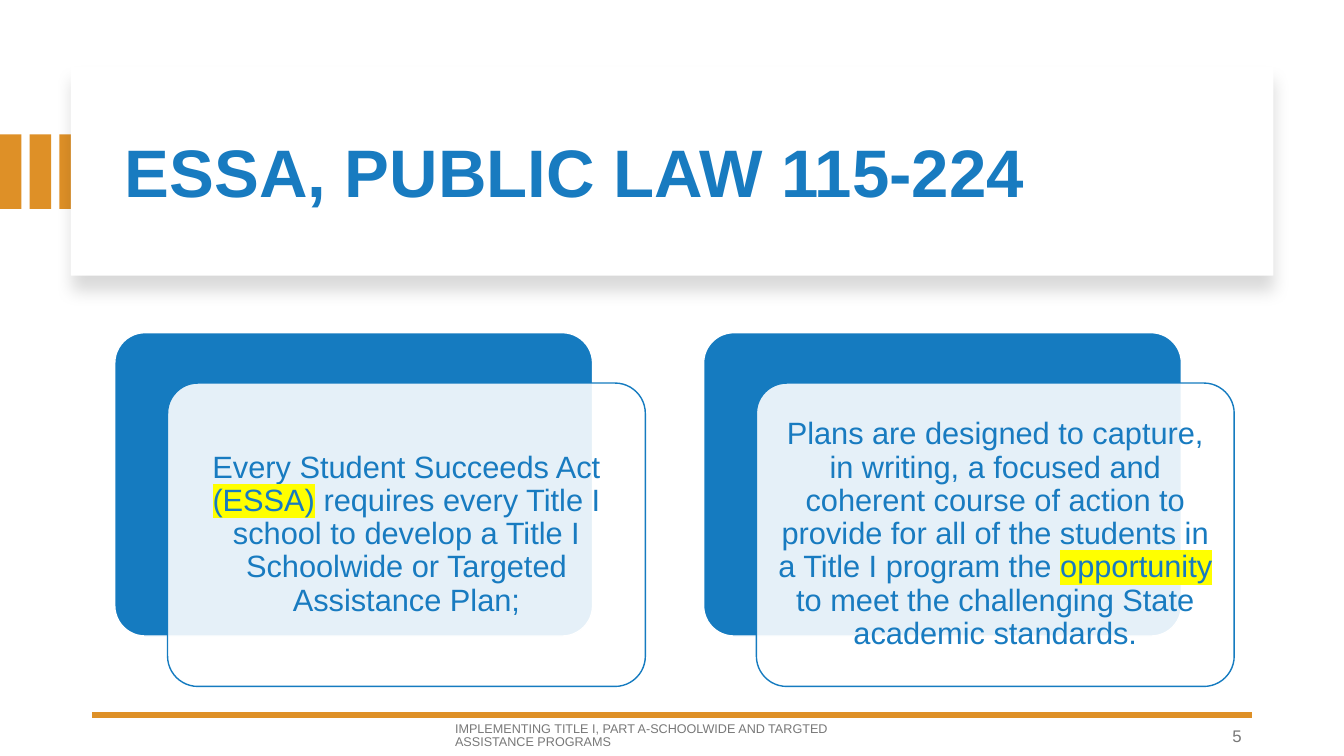
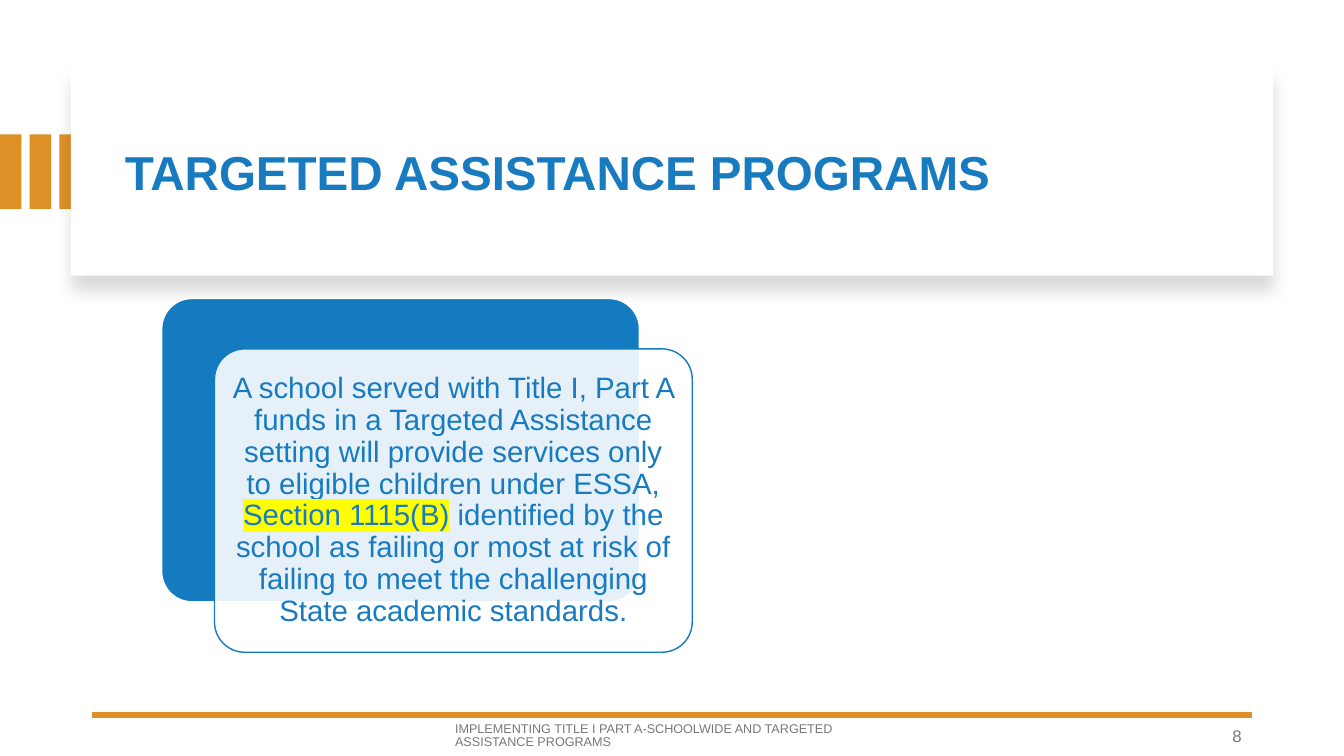
"""Build two Title I slides with overlapping cards under a raised title panel."""
from lxml import etree
from pptx import Presentation
from pptx.dml.color import RGBColor
from pptx.enum.shapes import MSO_CONNECTOR as Connector, MSO_SHAPE as Shape
from pptx.enum.text import MSO_ANCHOR as Anchor, MSO_AUTO_SIZE as AutoSize, PP_ALIGN as Align
from pptx.oxml import parse_xml
from pptx.oxml.ns import nsdecls, qn
from pptx.util import Pt

ORANGE = RGBColor(0xDE, 0x90, 0x27)
CARD_BLUE = RGBColor(0x15, 0x7B, 0xC0)
TEXT_BLUE = RGBColor(0x18, 0x7B, 0xC0)
GRAY = RGBColor(0x78, 0x78, 0x78)
WHITE = RGBColor(0xFF, 0xFF, 0xFF)
YELLOW = RGBColor(0xFF, 0xFF, 0x00)

SLIDES = [
    {
        "title": "ESSA, PUBLIC LAW 115-224",
        "title_size": 48,
        "footer": "IMPLEMENTING TITLE I, PART A-SCHOOLWIDE AND TARGTED ASSISTANCE PROGRAMS",
        "number": "5",
        "origin": (82, 237.6),
        "card_size": 22,
        "cards": [
            ("Every Student Succeeds Act ", "(ESSA)",
             " requires every Title I school to develop a Title I Schoolwide or Targeted Assistance Plan;"),
            ("Plans are designed to capture, in writing, a focused and coherent course of action to "
             "provide for all of the students in a Title I program the ", "opportunity",
             " to meet the challenging State academic standards."),
        ],
    },
    {
        "title": "TARGETED ASSISTANCE PROGRAMS",
        "title_size": 34,
        "footer": "IMPLEMENTING TITLE I PART A-SCHOOLWIDE AND TARGETED ASSISTANCE PROGRAMS",
        "number": "8",
        "origin": (115.5, 213.2),
        "card_size": 21,
        "cards": [
            ("A school served with Title I, Part A funds in a Targeted Assistance setting will "
             "provide services only to eligible children under ESSA, ", "Section 1115(B)",
             " identified by the school as failing or most at risk of failing to meet the "
             "challenging State academic standards."),
        ],
    },
]

BAR_COUNT, BAR_STEP = 3, 21.2
CARD_SIZE = (341.3, 216.7)
CARD_STEP = 420.6
FRONT_SHIFT = (37.7, 36)

TITLE_FONT = {"name": "Arial", "bold": True}
BODY_FONT = {"name": "Arial", "bold": False}

PANEL_SHADOW = (
    f'<a:effectLst {nsdecls("a")}>'
    f'<a:outerShdw blurRad="{Pt(11)}" dist="{Pt(10)}" dir="5400000" algn="t" rotWithShape="0">'
    '<a:srgbClr val="000000"><a:alpha val="15000"/></a:srgbClr>'
    '</a:outerShdw></a:effectLst>'
)


def add_block(slide, preset, box, fill, line=None):
    block = slide.shapes.add_shape(preset, *map(Pt, box))
    block.shadow.inherit = False
    block.fill.solid()
    block.fill.fore_color.rgb = fill
    if line is None:
        block.line.fill.background()
    else:
        block.line.color.rgb = line
        block.line.width = Pt(1)
    return block


def write(shape, parts, size, color, align, font=BODY_FONT, insets=(7.2, 3.6), spacing=0.9):
    frame = shape.text_frame
    side, end = map(Pt, insets)
    layout = {"word_wrap": True, "auto_size": AutoSize.NONE, "vertical_anchor": Anchor.MIDDLE,
              "margin_left": side, "margin_right": side, "margin_top": end, "margin_bottom": end}
    for key, value in layout.items():
        setattr(frame, key, value)
    paragraph = frame.paragraphs[0]
    paragraph.alignment, paragraph.line_spacing = align, spacing
    for index, text in enumerate(parts):
        run = paragraph.add_run()
        run.text = text
        for key, value in {**font, "size": Pt(size)}.items():
            setattr(run.font, key, value)
        run.font.color.rgb = color
        if index == 1:
            highlight(run)


def highlight(run):
    fill = run.font._element.find(qn("a:solidFill"))
    mark = etree.Element(qn("a:highlight"))
    etree.SubElement(mark, qn("a:srgbClr"), val=str(YELLOW))
    fill.addnext(mark)


def add_header(slide, text, size):
    for index in range(BAR_COUNT):
        add_block(slide, Shape.RECTANGLE, (index * BAR_STEP, 96, 15.3, 53.3), ORANGE)
    panel = add_block(slide, Shape.RECTANGLE, (50.6, 48, 859, 149), WHITE)
    properties = panel.element.spPr
    properties.replace(properties.find(qn("a:effectLst")), parse_xml(PANEL_SHADOW))

    title = slide.shapes.title
    title.left, title.top, title.width, title.height = map(Pt, (82, 64, 801.4, 122.4))
    write(title, [text], size, TEXT_BLUE, Align.LEFT, TITLE_FONT)
    title.element.getparent().append(title.element)


def add_footer(slide, text, number):
    rule = slide.shapes.add_connector(Connector.STRAIGHT, *map(Pt, (894, 510.5, 66, 510.5)))
    rule.line.color.rgb = ORANGE
    rule.line.width = Pt(4.5)
    etree.SubElement(rule.element.spPr, qn("a:effectLst"))
    footer = slide.shapes.add_textbox(*map(Pt, (318, 511.2, 324, 28.8)))
    write(footer, [text], 9, GRAY, Align.LEFT)
    page = slide.shapes.add_textbox(*map(Pt, (678, 511.2, 216, 28.8)))
    write(page, [number], 12, GRAY, Align.RIGHT, spacing=1.0)


def add_card(slide, left, top, parts, size):
    back = add_block(slide, Shape.ROUNDED_RECTANGLE, (left, top, *CARD_SIZE), CARD_BLUE, WHITE)
    shift_x, shift_y = FRONT_SHIFT
    front = add_block(slide, Shape.ROUNDED_RECTANGLE,
                      (left + shift_x, top + shift_y, *CARD_SIZE), WHITE, CARD_BLUE)
    for card in (back, front):
        card.adjustments[0] = 0.1
    white = front.element.spPr.find(qn("a:solidFill")).find(qn("a:srgbClr"))
    etree.SubElement(white, qn("a:alpha"), val="89000")
    write(front, parts, size, TEXT_BLUE, Align.CENTER, insets=(6.5, 6.5))


def main():
    deck = Presentation()
    deck.slide_width, deck.slide_height = Pt(960), Pt(540)
    for content in SLIDES:
        slide = deck.slides.add_slide(deck.slide_layouts.get_by_name("Title Only"))
        add_header(slide, content["title"], content["title_size"])
        add_footer(slide, content["footer"], content["number"])
        left, top = content["origin"]
        for index, parts in enumerate(content["cards"]):
            add_card(slide, left + index * CARD_STEP, top, parts, content["card_size"])
    deck.save("out.pptx")


if __name__ == "__main__":
    main()
